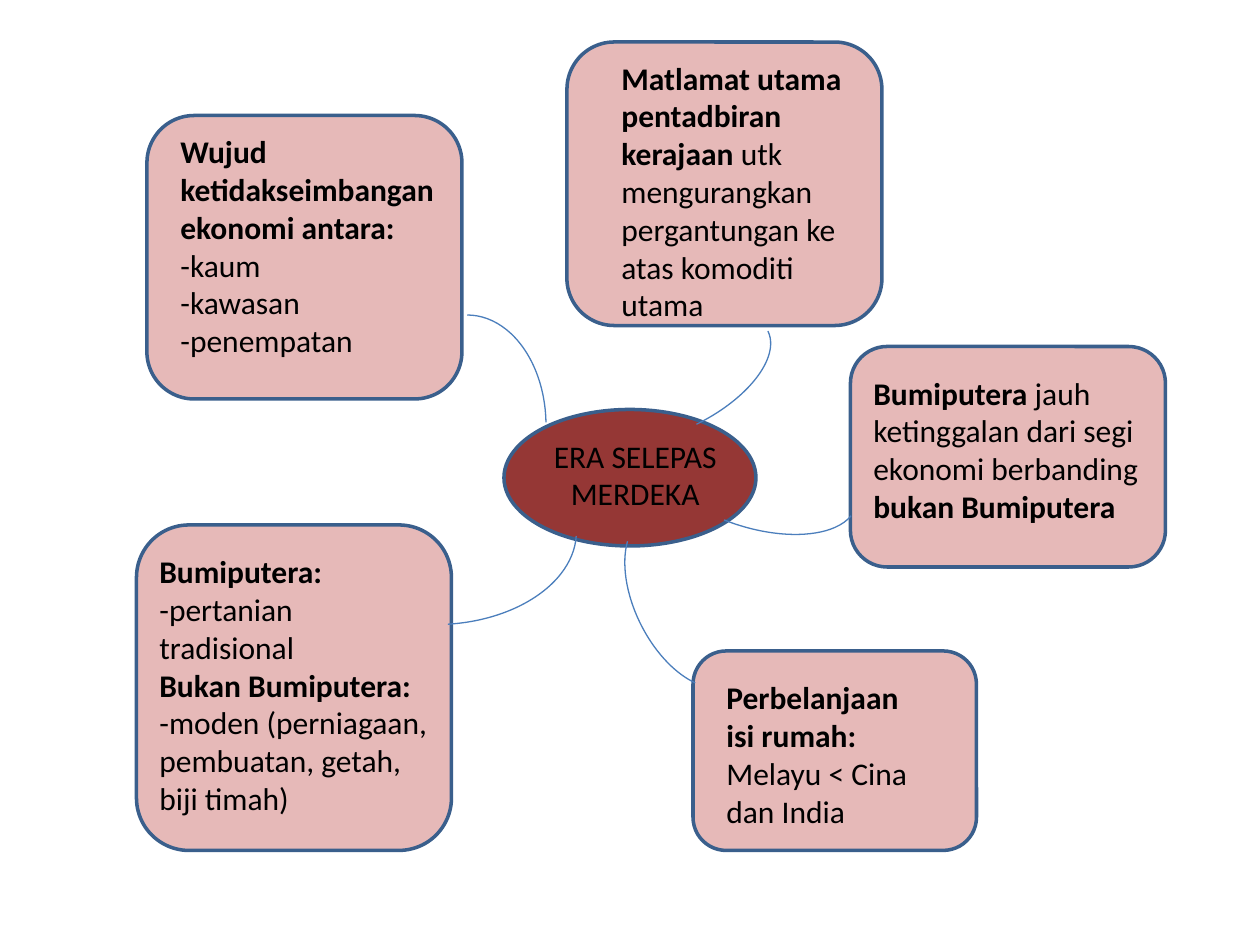
from pptx import Presentation
from pptx.dml.color import RGBColor
from pptx.enum import shapes, text
from pptx.util import Cm, Pt

THEME = {
    "font": "Calibri", "size": 18, "ink": "000000",
    "node": "E6B9B8", "hub": "953735",
    "edge": "3A5F8C", "edge_pt": 2,
    "link": "4B7EBC", "link_pt": 0.75,
}
GRID = 2.54 / 12

HUB = {"box": (48, 39, 24, 13), "area": (48, 41, 25, 8.5),
       "lines": ["ERA SELEPAS MERDEKA"]}

NODES = [
    {"box": (14, 11, 30, 27), "area": (16, 12, 28, 23),
     "lines": ["*Wujud ketidakseimbangan ekonomi antara:*",
               "-kaum", "-kawasan", "-penempatan"]},
    {"box": (66, 62, 27, 19), "area": (68, 64, 22, 15.7),
     "lines": ["*Perbelanjaan isi rumah:*", "Melayu < Cina dan India"]},
    {"box": (81, 33, 30, 21), "area": (82, 35, 31, 15.7),
     "lines": ["*Bumiputera *jauh ketinggalan dari segi ekonomi "
               "berbanding *bukan Bumiputera*"]},
    {"box": (54, 4, 30, 27), "area": (58, 5, 26, 26.6),
     "lines": ["*Matlamat utama pentadbiran kerajaan *utk mengurangkan "
               "pergantungan ke atas komoditi utama"]},
    {"box": (13, 50, 30, 31), "area": (14, 52, 28, 26.6),
     "lines": ["*Bumiputera:*", "-pertanian tradisional",
               "*Bukan Bumiputera:*",
               "-moden (perniagaan, pembuatan, getah, biji timah)"]},
]

ARCS = [
    ((37, 30, 15, 21), 0, (162, 214.75)),
    ((33.84, 38.4, 16.68, 25.44), 86.7, (163.79, 0)),
    ((59.16, 25.92, 9.96, 20.04), 63.9, (162, 0)),
    ((60.48, 48.24, 10.08, 17.88), 153.6, (174.81, 42.46)),
    ((66.96, 35.28, 9.96, 20.04), 107.2, (165.32, 10.85)),
]


def place(box):
    return [Cm(n * GRID) for n in box]


def tint(key):
    return RGBColor.from_string(THEME[key])


def draw(slide, kind, box, fill, line):
    shape = slide.shapes.add_shape(kind, *place(box))
    shape.shadow.inherit = False
    if fill:
        shape.fill.solid()
        shape.fill.fore_color.rgb = tint(fill)
    else:
        shape.fill.background()
    shape.line.color.rgb = tint(line)
    shape.line.width = Pt(THEME[line + "_pt"])
    return shape


def write(slide, area, lines, align):
    frame = slide.shapes.add_textbox(*place(area)).text_frame
    frame.word_wrap = True
    frame.auto_size = text.MSO_AUTO_SIZE.SHAPE_TO_FIT_TEXT
    for i, line in enumerate(lines):
        para = frame.add_paragraph() if i else frame.paragraphs[0]
        para.alignment = align
        para.font.name = THEME["font"]
        para.font.size = Pt(THEME["size"])
        para.font.color.rgb = tint("ink")
        for j, part in enumerate(line.split("*")):
            if part:
                run = para.add_run()
                run.text = part
                run.font.bold = j % 2 == 1


def main():
    deck = Presentation()
    deck.slide_width, deck.slide_height = Cm(25.4), Cm(19.05)
    slide = deck.slides.add_slide(deck.slide_layouts[6])
    kinds = shapes.MSO_SHAPE

    for node in NODES:
        draw(slide, kinds.FLOWCHART_ALTERNATE_PROCESS, node["box"], "node", "edge")
    draw(slide, kinds.OVAL, HUB["box"], "hub", "edge")

    write(slide, HUB["area"], HUB["lines"], text.PP_ALIGN.CENTER)
    for node in NODES:
        write(slide, node["area"], node["lines"], text.PP_ALIGN.LEFT)

    for box, turn, ends in ARCS:
        arc = draw(slide, kinds.ARC, box, None, "link")
        arc.rotation = turn
        arc.adjustments[0], arc.adjustments[1] = ends

    deck.save("out.pptx")


if __name__ == "__main__":
    main()
